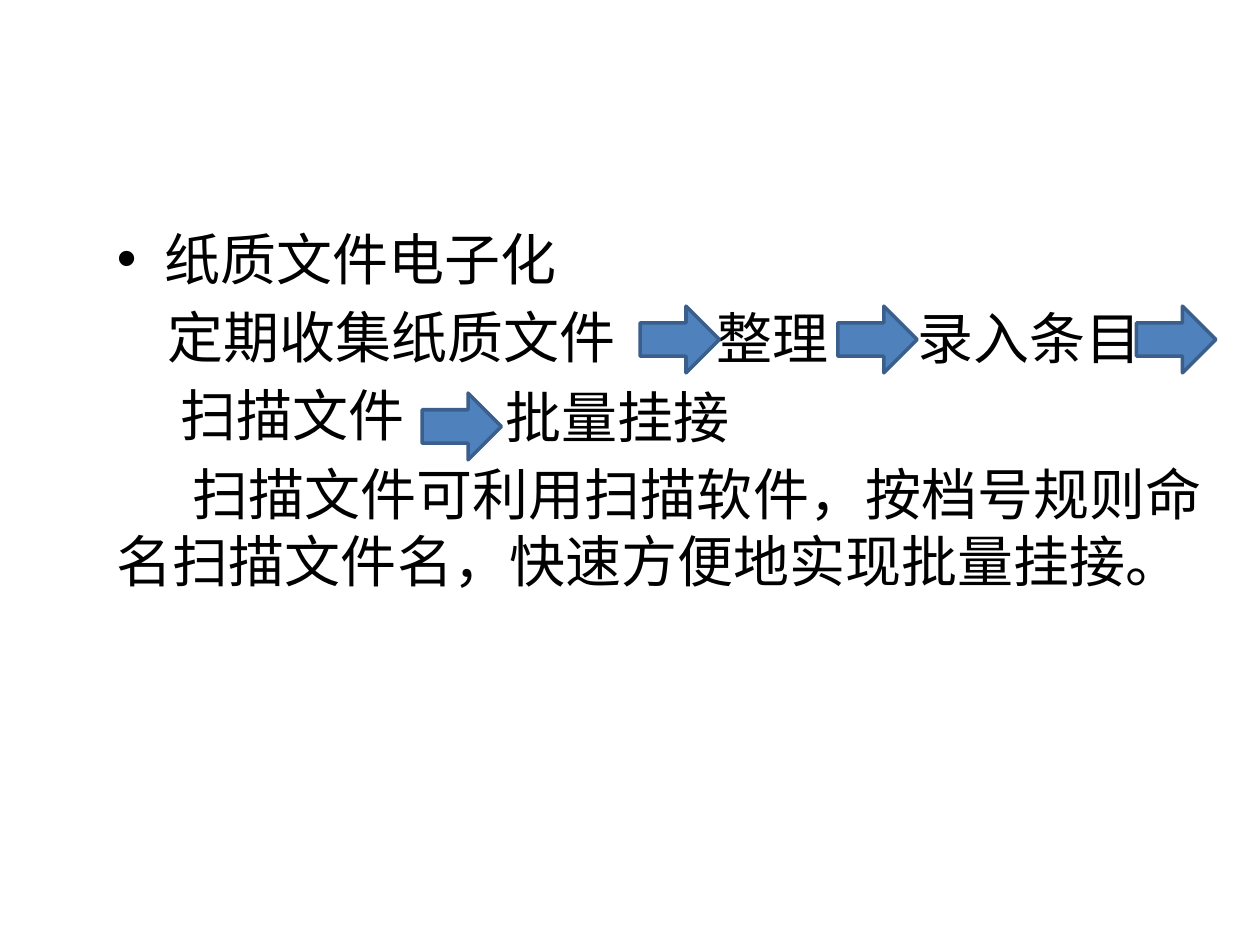
from lxml import etree
from pptx import Presentation, util as u
from pptx.dml.color import RGBColor
from pptx.enum import shapes
from pptx.oxml.ns import qn

Pt = u.Pt
EM = 32  # body size, also the width of one Chinese character
SPACE = 7.23  # width of one space at the body size
LEFT, TOP = 59.76, 124.56
ROW_PITCH = 45.3
INSET = 7.2


def color(value):
    return RGBColor.from_string(value)


def add_text_box(page, left, top, width, height, wrap=True):
    box = page.shapes.add_textbox(Pt(left), Pt(top), Pt(width), Pt(height))
    box.text_frame.word_wrap = wrap
    return box.text_frame


def add_paragraph(frame, content, first=False, margin=0, indent=0, bullet=None):
    para = frame.paragraphs[0] if first else frame.add_paragraph()
    props = para._p.get_or_add_pPr()
    props.set("marL", str(Pt(margin)))
    props.set("indent", str(Pt(indent)))
    if bullet:
        etree.SubElement(props, qn("a:buFont"), typeface="Arial")
        etree.SubElement(props, qn("a:buChar"), char=bullet)
    if not first:
        para.space_before = Pt(6.4)
    span = para.add_run()
    span.text = content
    span.font.name = "Calibri"
    span.font.size = Pt(EM)
    span.font.color.rgb = color("000000")


def add_step(page, content, offset, row):
    width = len(content) * EM + 2 * INSET
    frame = add_text_box(page, LEFT + offset, TOP + row * ROW_PITCH, width, 46, wrap=False)
    add_paragraph(frame, content, first=True)


def add_arrow(page, left, top):
    arrow = page.shapes.add_shape(shapes.MSO_SHAPE.RIGHT_ARROW,
                                  Pt(left), Pt(top), Pt(45.36), Pt(38.16))
    arrow.shadow.inherit = False
    arrow.fill.solid()
    arrow.fill.fore_color.rgb = color("4F81BD")
    arrow.line.color.rgb = color("3A5F8C")
    arrow.line.width = Pt(2)


def main():
    deck = Presentation()
    deck.slide_width, deck.slide_height = Pt(720), Pt(540)
    page = deck.slides.add_slide(deck.slide_layouts[6])

    # Heading, first step of each row, and the scanning note
    body = add_text_box(page, LEFT, TOP, 635.76, 338.4)
    add_paragraph(body, "纸质文件电子化", first=True, margin=27, indent=-27, bullet="•")
    add_paragraph(body, "定期收集纸质文件", indent=4 * SPACE)
    add_paragraph(body, "扫描文件", indent=5 * SPACE)
    add_paragraph(body, "扫描文件可利用扫描软件，按档号规则命名扫描文件名，快速方便地实现批量挂接。",
                  indent=6 * SPACE)

    # Later steps, each set off by room for an arrow
    sort_offset = 12 * SPACE + 8 * EM
    add_step(page, "整理", sort_offset, row=1)
    add_step(page, "录入条目", sort_offset + 2 * EM + 7 * SPACE, row=1)
    add_step(page, "批量挂接", 13 * SPACE + 4 * EM, row=2)

    # Arrows between the steps
    for left, top in ((365.76, 174.96), (478.8, 174.96), (649.44, 174.96), (241.2, 224.64)):
        add_arrow(page, left, top)

    deck.save("out.pptx")


if __name__ == "__main__":
    main()
